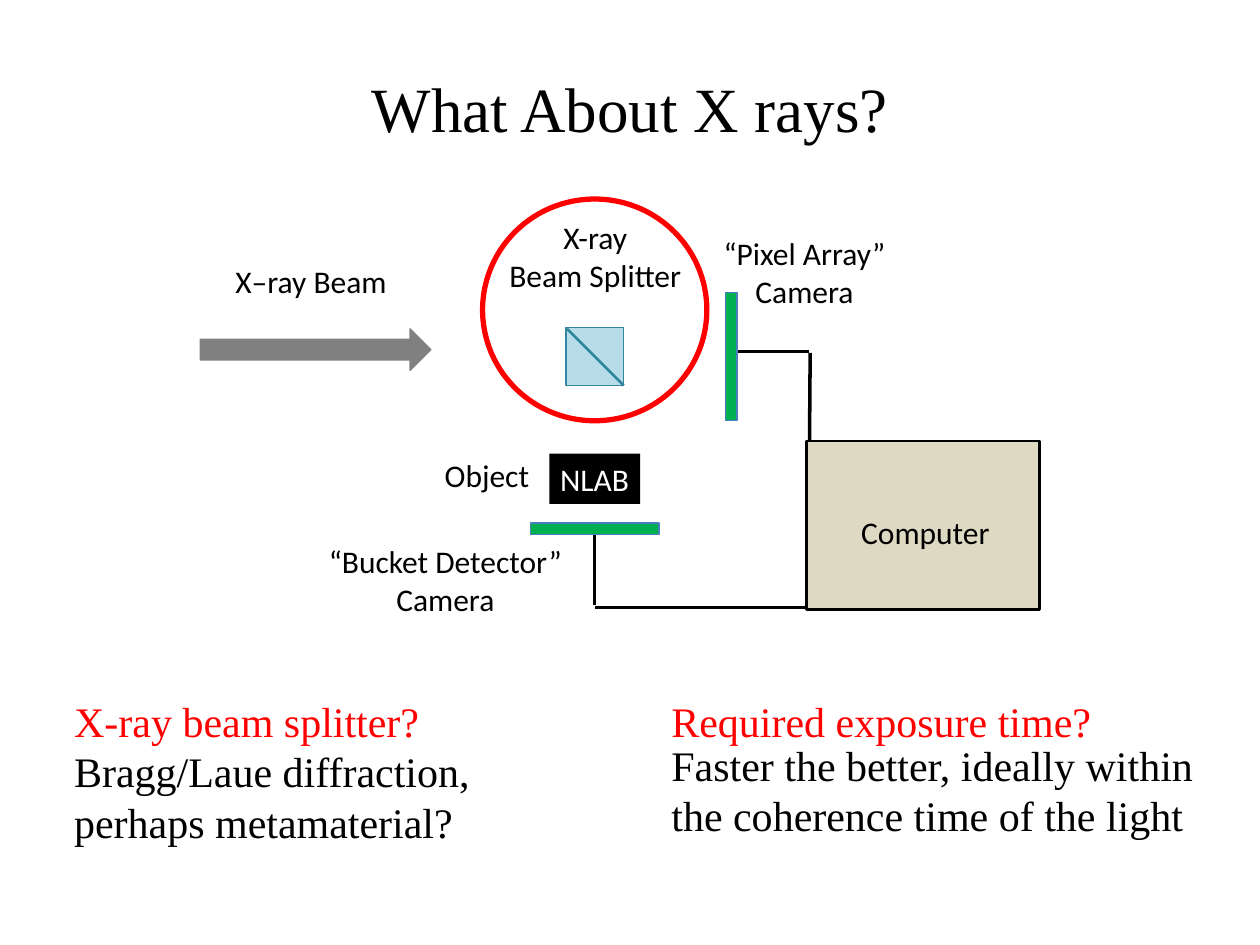
import pptx
import pptx.dml.color
import pptx.enum.shapes
import pptx.enum.text
import pptx.oxml.ns
import pptx.util
from lxml import etree
from pptx.util import Inches

RGBColor = pptx.dml.color.RGBColor
BLACK = RGBColor(0x00, 0x00, 0x00)
WHITE = RGBColor(0xFF, 0xFF, 0xFF)
RED = RGBColor(0xFF, 0x00, 0x00)
GRAY = RGBColor(0x80, 0x80, 0x80)
GREEN = RGBColor(0x00, 0xB0, 0x50)
DETECTOR_EDGE = RGBColor(0x4B, 0x7E, 0xBC)
GLASS = RGBColor(0xB7, 0xDE, 0xE8)
GLASS_EDGE = RGBColor(0x31, 0x85, 0x9C)
BEIGE = RGBColor(0xDD, 0xD9, 0xC3)

SERIF = "Times New Roman"
SANS = "Calibri"
SHAPES = pptx.enum.shapes.MSO_SHAPE
LEFT = pptx.enum.text.PP_ALIGN.LEFT
CENTER = pptx.enum.text.PP_ALIGN.CENTER


def write_lines(text_frame, lines, font_name, size, alignment):
    """Write one paragraph for each (text, colour) pair."""
    for index, (text, color) in enumerate(lines):
        paragraph = text_frame.add_paragraph() if index else text_frame.paragraphs[0]
        paragraph.text = text
        paragraph.alignment = alignment
        paragraph.font.name = font_name
        paragraph.font.size = pptx.util.Pt(size)
        paragraph.font.color.rgb = color


def add_text(slide, box, lines, font_name, size, alignment, wrap=True):
    text_box = slide.shapes.add_textbox(*map(Inches, box))
    text_box.text_frame.word_wrap = wrap
    write_lines(text_box.text_frame, lines, font_name, size, alignment)


def add_label(slide, box, *texts, alignment=CENTER):
    add_text(slide, box, [(text, BLACK) for text in texts], SANS, 18, alignment)


def add_note(slide, box, *lines):
    add_text(slide, box, lines, SERIF, 24, LEFT)


def add_figure(slide, kind, box, fill=None, edge=None, width=0.75):
    """Add a preset shape; a missing fill or edge colour means none is drawn."""
    shape = slide.shapes.add_shape(kind, *map(Inches, box))
    shape.shadow.inherit = False
    if fill is None:
        shape.fill.background()
    else:
        shape.fill.solid()
        shape.fill.fore_color.rgb = fill
    if edge is None:
        shape.line.fill.background()
    else:
        shape.line.color.rgb = edge
        shape.line.width = pptx.util.Pt(width)
    return shape


def add_line(slide, start, end, color=BLACK, width=2):
    connector = slide.shapes.add_connector(
        pptx.enum.shapes.MSO_CONNECTOR.STRAIGHT, *map(Inches, start + end))
    connector.line.color.rgb = color
    connector.line.width = pptx.util.Pt(width)
    etree.SubElement(connector._element.spPr, pptx.oxml.ns.qn("a:effectLst"))
    return connector


def add_beam_splitter(slide):
    add_figure(slide, SHAPES.RECTANGLE, (4.49, 2.6, 0.46, 0.46), GLASS, GLASS_EDGE, 1)
    add_line(slide, (4.5, 2.61), (4.95, 3.06), GLASS_EDGE, 1.5)
    add_label(slide, (3.76, 1.68, 1.93, 0.71), "X-ray", "Beam Splitter")
    add_figure(slide, SHAPES.OVAL, (3.83, 1.58, 1.78, 1.76), edge=RED, width=3)


def add_detectors_and_computer(slide):
    add_line(slide, (6.42, 2.79), (5.86, 2.79))
    add_line(slide, (6.43, 2.8), (6.42, 4.2))
    add_line(slide, (7.16, 4.82), (4.72, 4.82))
    bucket_wire = add_line(slide, (4.72, 4.24), (4.72, 4.8))

    add_figure(slide, SHAPES.RECTANGLE, (6.4, 3.5, 1.85, 1.34), BEIGE, BLACK, 1.5)
    add_label(slide, (6.38, 4.02, 1.93, 0.4), "Computer")

    bucket = add_figure(slide, SHAPES.RECTANGLE, (4.21, 4.15, 1.02, 0.09),
                        GREEN, DETECTOR_EDGE)
    bucket_wire.begin_connect(bucket, 2)
    add_label(slide, (2.47, 4.25, 2.13, 0.71), "“Bucket Detector”", "Camera")

    add_figure(slide, SHAPES.RECTANGLE, (5.76, 2.32, 0.09, 1.02), GREEN, DETECTOR_EDGE)
    add_label(slide, (5.42, 1.81, 1.93, 0.71), "“Pixel Array” Camera")


def add_target(slide):
    target = add_figure(slide, SHAPES.RECTANGLE, (4.36, 3.6, 0.72, 0.4), BLACK)
    target.text_frame.word_wrap = False
    write_lines(target.text_frame, [("NLAB", WHITE)], SANS, 18, CENTER)
    add_label(slide, (2.8, 3.57, 2.13, 0.4), "Object")


def main():
    presentation = pptx.Presentation()
    presentation.slide_width = Inches(10)
    presentation.slide_height = Inches(7.5)
    slide = presentation.slides.add_slide(presentation.slide_layouts[6])

    add_text(slide, (2.83, 0.5, 4.34, 0.71), [("What About X rays?", BLACK)],
             SERIF, 36, CENTER, wrap=False)

    add_label(slide, (1.77, 2.03, 1.83, 0.4), "X–ray Beam", alignment=LEFT)
    add_figure(slide, SHAPES.RIGHT_ARROW, (1.59, 2.61, 1.83, 0.33), GRAY, GRAY)
    add_beam_splitter(slide)
    add_detectors_and_computer(slide)
    add_target(slide)

    add_note(slide, (0.49, 5.47, 3.34, 1.31), ("X-ray beam splitter?", RED),
             ("Bragg/Laue diffraction,", BLACK), ("perhaps metamaterial?", BLACK))
    add_note(slide, (5.23, 5.47, 3.91, 0.5), ("Required exposure time?", RED))
    add_note(slide, (5.23, 5.82, 4.52, 0.91),
             ("Faster the better, ideally within the coherence time of the light", BLACK))

    presentation.save("out.pptx")


if __name__ == "__main__":
    main()
